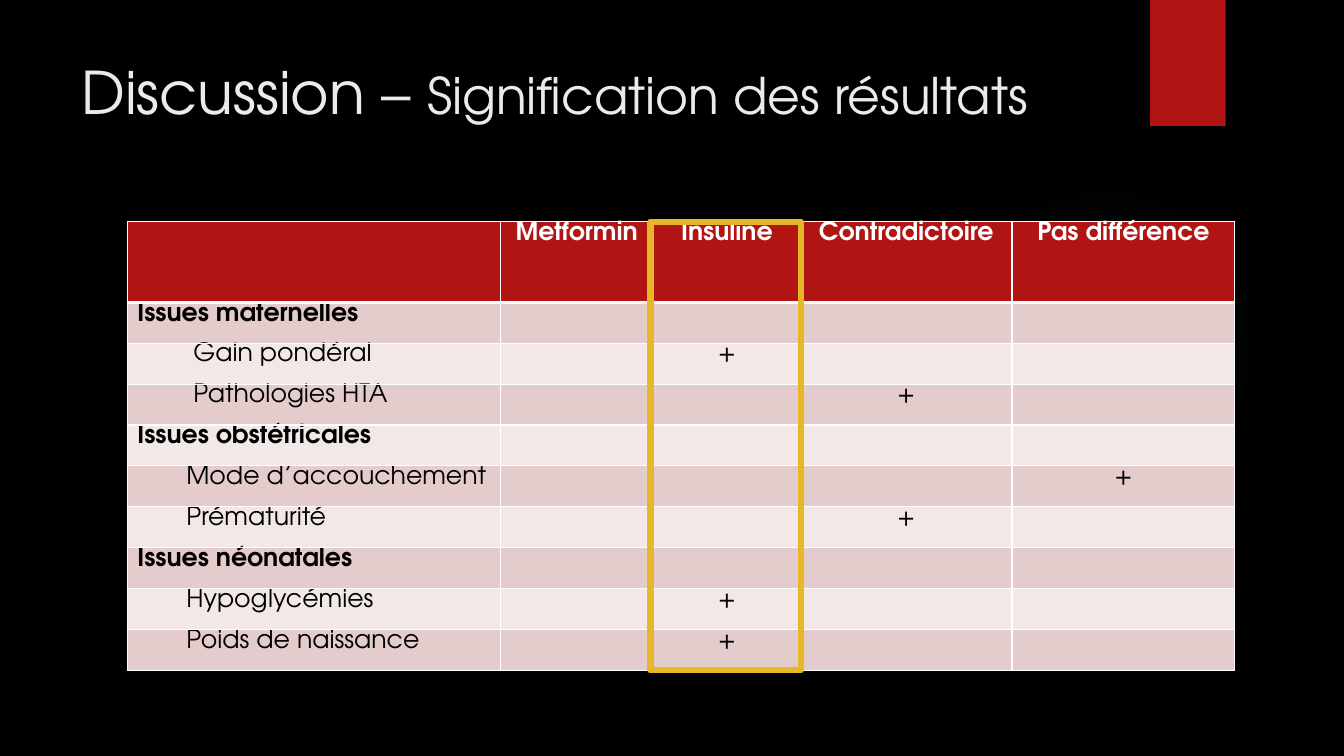
from lxml import etree
from pptx import Presentation
from pptx.dml.color import RGBColor
from pptx.enum.shapes import MSO_SHAPE
from pptx.enum.text import MSO_ANCHOR, PP_ALIGN
from pptx.oxml import parse_xml
from pptx.oxml.ns import nsdecls, qn
from pptx.util import Pt

RECTANGLE, OVAL = MSO_SHAPE.RECTANGLE, MSO_SHAPE.OVAL
TOP, LEFT, CENTER = MSO_ANCHOR.TOP, PP_ALIGN.LEFT, PP_ALIGN.CENTER
FONT = "TeX Gyre Adventor"
COLORS = {
    "background": "000000", "red": "B01513", "title": "EBEBEB", "white": "FFFFFF",
    "black": "000000", "dark_band": "E4CCCC", "light_band": "F2E8E7",
    "gold": "E6B729", "glow": "50B9C1",
}
GLOW_STOPS = [(0, 7), (36, 6), (69, 0), (100, 0)]  # position %, opacity %

HEADERS = ["", "Metformin", "Insuline", "Contradictoire", "Pas différence"]
# Label, indent in points (0 for a section heading), column of the plus sign
OUTCOMES = [
    ("Issues maternelles", 0, None),
    ("Gain pondéral", 40, 2),
    ("Pathologies HTA", 40, 3),
    ("Issues obstétricales", 0, None),
    ("Mode d’accouchement", 35, 4),
    ("Prématurité", 35, 3),
    ("Issues néonatales", 0, None),
    ("Hypoglycémies", 35, 2),
    ("Poids de naissance", 35, 2),
]
COLUMN_WIDTHS = [266.4, 109.4, 105.1, 151.2, 159.1]
HEADER_HEIGHT = 57.6


def color(name):
    return RGBColor.from_string(COLORS[name])


def set_font(font, color_name, **values):
    for attribute, value in {"name": FONT, **values}.items():
        setattr(font, attribute, value)
    font.color.rgb = color(color_name)


def add_plain_shape(slide, kind, box):
    shape = slide.shapes.add_shape(kind, *map(Pt, box))
    shape.shadow.inherit = False
    shape.fill.background()
    shape.line.fill.background()
    return shape


def add_decoration(slide, glow_box, ribbon_box):
    # Faint round glow
    glow = add_plain_shape(slide, OVAL, glow_box)
    stops = "".join(
        f'<a:gs pos="{position * 1000}"><a:srgbClr val="{COLORS["glow"]}">'
        f'<a:alpha val="{opacity * 1000}"/></a:srgbClr></a:gs>'
        for position, opacity in GLOW_STOPS)
    gradient = parse_xml(
        f'<a:gradFill {nsdecls("a")}><a:gsLst>{stops}</a:gsLst><a:path path="circle">'
        '<a:fillToRect l="50000" t="50000" r="50000" b="50000"/></a:path></a:gradFill>')
    properties = glow.element.spPr
    properties.replace(properties.find(qn("a:noFill")), gradient)

    # Red ribbon
    ribbon = add_plain_shape(slide, RECTANGLE, ribbon_box)
    ribbon.fill.solid()
    ribbon.fill.fore_color.rgb = color("red")


def add_title(slide, box):
    frame = slide.shapes.add_textbox(*map(Pt, box)).text_frame
    frame.word_wrap = True
    frame.vertical_anchor = TOP
    for text, size in [("Discussion – ", 42), ("Signification des résultats", 36)]:
        run = frame.paragraphs[0].add_run()
        run.text = text
        set_font(run.font, "title", size=Pt(size))


def add_borders(cell, widths):
    properties = cell._tc.get_or_add_tcPr()
    for side, width in widths.items():
        line = etree.SubElement(properties, qn(f"a:ln{side}"), w=str(Pt(width)))
        fill = etree.SubElement(line, qn("a:solidFill"))
        etree.SubElement(fill, qn("a:srgbClr"), val=COLORS["white"])


def fill_cell(cell, text, fill, text_color, bold, align, indent=0, bottom=1, top=1):
    add_borders(cell, {"L": 1, "R": 1, "T": top, "B": bottom})
    cell.fill.solid()
    cell.fill.fore_color.rgb = color(fill)
    cell.margin_top = cell.margin_bottom = 0
    cell.vertical_anchor = TOP
    cell.text = text
    paragraph = cell.text_frame.paragraphs[0]
    paragraph.alignment = align
    if indent:
        paragraph._p.get_or_add_pPr().set("marL", str(Pt(indent)))
    set_font(paragraph.font, text_color, size=Pt(18), bold=bold)
    for run in paragraph.runs:
        set_font(run.font, text_color, size=Pt(18), bold=bold)


def add_results(slide, box):
    left, top, width, height = box
    table = slide.shapes.add_table(
        len(OUTCOMES) + 1, len(HEADERS), *map(Pt, box)).table
    for column, column_width in zip(table.columns, COLUMN_WIDTHS):
        column.width = Pt(column_width)
    for row in table.rows:
        row.height = Pt((height - HEADER_HEIGHT) / len(OUTCOMES))
    table.rows[0].height = Pt(HEADER_HEIGHT)

    # Header row
    for index, header in enumerate(HEADERS):
        fill_cell(table.cell(0, index), header, "red", "white", True, CENTER, bottom=3)

    # Banded outcome rows
    for row, (label, indent, plus_column) in enumerate(OUTCOMES, 1):
        band = "dark_band" if row % 2 else "light_band"
        line_above = 3 if row == 1 else 1
        fill_cell(table.cell(row, 0), label, band, "black", not indent, LEFT,
                  indent, top=line_above)
        for index in range(1, len(HEADERS)):
            fill_cell(table.cell(row, index), "+" if index == plus_column else "",
                      band, "black", False, CENTER, top=line_above)

    # Frame around the insulin column
    frame_left = left + sum(COLUMN_WIDTHS[:2]) - 2
    frame = add_plain_shape(slide, RECTANGLE, (frame_left, top, 107.3, height))
    frame.line.color.rgb = color("gold")
    frame.line.width = Pt(4.5)


def main():
    presentation = Presentation()
    presentation.slide_width, presentation.slide_height = Pt(960), Pt(540)
    slide = presentation.slides.add_slide(presentation.slide_layouts[6])
    slide.background.fill.solid()
    slide.background.fill.fore_color.rgb = color("background")
    add_decoration(slide, (677.5, 131.8, 221.8, 221.8), (821.5, 0, 54, 90))
    add_title(slide, (51, 36, 832.3, 110.2))
    add_results(slide, (90.9, 158.4, 792, 320.4))
    presentation.save("out.pptx")


if __name__ == "__main__":
    main()
